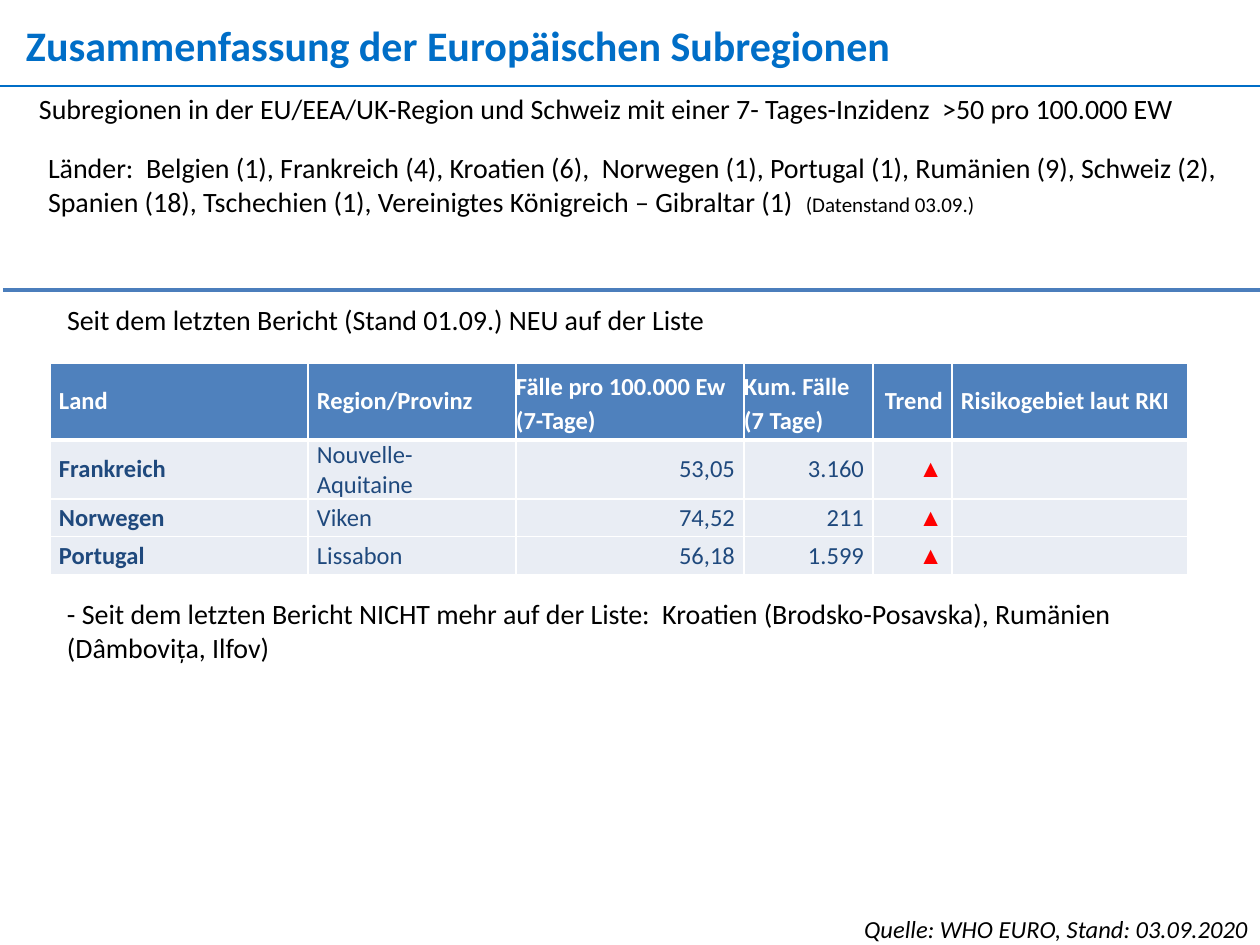
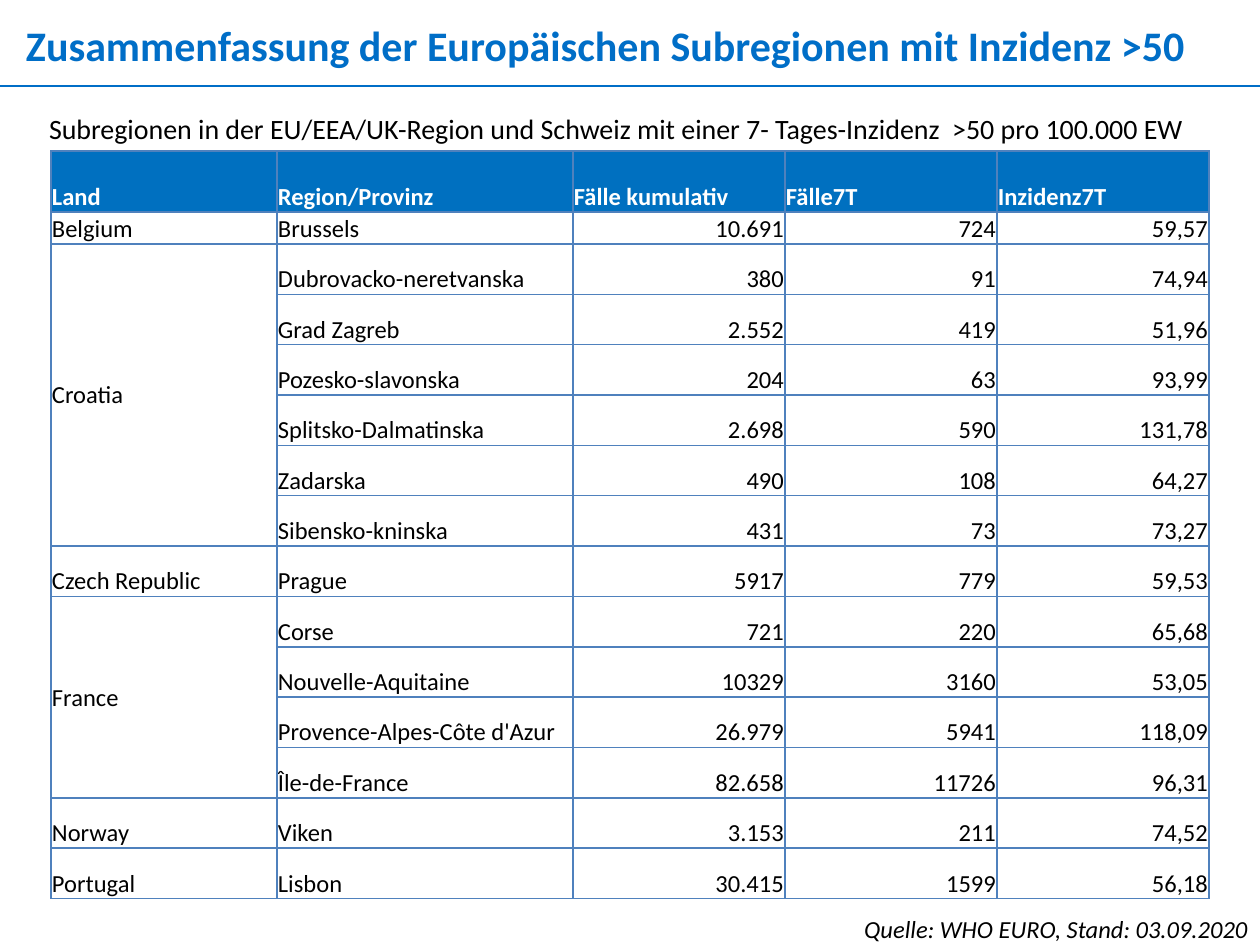
from dataclasses import dataclass
from itertools import accumulate

from lxml.etree import SubElement
from pptx import Presentation
from pptx.dml.color import RGBColor
from pptx.enum.shapes import MSO_CONNECTOR
from pptx.enum.text import MSO_ANCHOR, PP_ALIGN
from pptx.oxml.ns import qn
from pptx.util import Emu, Pt


@dataclass(frozen=True)
class Theme:
    """Fonts, colours and type sizes of the report."""
    font: str = "Calibri"
    symbol_font: str = "Arial"
    title_blue: str = "006EC7"
    divider: str = "4B7EBC"
    accent: str = "4F81BD"
    header_blue: str = "0070C0"
    row_tint: str = "E9EDF4"
    navy: str = "1F497D"
    rising: str = "FF0000"
    black: str = "000000"
    white: str = "FFFFFF"
    title_size: int = 24
    body_size: int = 16
    table_size: int = 14
    note_size: int = 12


THEME = Theme()
PX_PER_INCH = 126
SLIDE_BOX = (0, 0, 1260, 945)
INSET = (13, 6, 13, 6)
NO_INSET = (0, 0, 0, 0)
SUBTITLE = ("Subregionen in der EU/EEA/UK-Region und Schweiz mit einer "
            "7- Tages-Inzidenz  >50 pro 100.000 EW")
NEW_HEADERS = ["Land", "Region/Provinz", "Fälle pro 100.000 Ew\n(7-Tage)",
               "Kum. Fälle\n(7 Tage)", "Trend", "Risikogebiet laut RKI"]
NEW_REGIONS = [
    ("Frankreich", "Nouvelle-Aquitaine", "53,05", "3.160", "▲", ""),
    ("Norwegen", "Viken", "74,52", "211", "▲", ""),
    ("Portugal", "Lissabon", "56,18", "1.599", "▲", ""),
]
INCIDENCE_HEADERS = ["Land", "Region/Provinz", "Fälle kumulativ", "Fälle7T", "Inzidenz7T"]
INCIDENCE = {
    "Belgium": [("Brussels", "10.691", "724", "59,57")],
    "Croatia": [
        ("Dubrovacko-neretvanska", "380", "91", "74,94"),
        ("Grad Zagreb", "2.552", "419", "51,96"),
        ("Pozesko-slavonska", "204", "63", "93,99"),
        ("Splitsko-Dalmatinska", "2.698", "590", "131,78"),
        ("Zadarska", "490", "108", "64,27"),
        ("Sibensko-kninska", "431", "73", "73,27"),
    ],
    "Czech Republic": [("Prague", "5917", "779", "59,53")],
    "France": [
        ("Corse", "721", "220", "65,68"),
        ("Nouvelle-Aquitaine", "10329", "3160", "53,05"),
        ("Provence-Alpes-Côte d'Azur", "26.979", "5941", "118,09"),
        ("Île-de-France", "82.658", "11726", "96,31"),
    ],
    "Norway": [("Viken", "3.153", "211", "74,52")],
    "Portugal": [("Lisbon", "30.415", "1599", "56,18")],
}


def px(length):
    """Turn px into EMU."""
    return Emu(round(length * 914400 / PX_PER_INCH))


def within(box, left, top, width, height):
    """Return a box given relative to the corner of another."""
    return box[0] + left, box[1] + top, width, height


def apply_format(target, values):
    """Set each attribute named in a dict."""
    for name, value in values.items():
        setattr(target, name, value)


def set_insets(target, insets):
    """Set left, top, right and bottom margins in px."""
    for side, inset in zip(("left", "top", "right", "bottom"), insets):
        setattr(target, f"margin_{side}", px(inset))


def add_run(paragraph, text, size, color=THEME.black, **font_values):
    """Add one formatted run to a paragraph."""
    run = paragraph.add_run()
    run.text = text
    apply_format(run.font, {"name": THEME.font, "size": Pt(size), **font_values})
    run.font.color.rgb = RGBColor.from_string(color)


def add_text(slide, box, text, size=THEME.body_size, insets=INSET,
             align=PP_ALIGN.LEFT, **run_values):
    """Add a wrapped text box and return its paragraph."""
    frame = slide.shapes.add_textbox(*map(px, box)).text_frame
    frame.word_wrap = True
    set_insets(frame, insets)
    paragraph = frame.paragraphs[0]
    paragraph.alignment = align
    add_run(paragraph, text, size, **run_values)
    return paragraph


def add_rule(slide, left, top, width, color, weight):
    """Draw a horizontal line without shadow."""
    ends = map(px, (left, top, left + width, top))
    rule = slide.shapes.add_connector(MSO_CONNECTOR.STRAIGHT, *ends)
    rule.line.color.rgb = RGBColor.from_string(color)
    rule.line.width = Pt(weight)
    SubElement(rule._element.spPr, qn("a:effectLst"))


def add_grid(slide, box, widths, heights):
    """Add an unstyled table with the given columns and rows."""
    grid = slide.shapes.add_table(len(heights), len(widths), *map(px, box)).table
    apply_format(grid, {"first_row": False, "horz_banding": False})
    for column, width in zip(grid.columns, widths):
        column.width = px(width)
    for row, height in zip(grid.rows, heights):
        row.height = px(height)
    return grid


def set_borders(cell, color, bottom=1):
    """Give a cell its four borders, the bottom one with its own weight."""
    properties = cell._tc.get_or_add_tcPr()
    for side, weight in (("L", 1), ("R", 1), ("T", 1), ("B", bottom)):
        border = SubElement(properties, qn(f"a:ln{side}"), w=str(Pt(weight)))
        paint = SubElement(border, qn("a:solidFill"))
        SubElement(paint, qn("a:srgbClr"), val=color)


def fill_cell(cell, text, border, fill=None, bottom=1, insets=NO_INSET,
              anchor=MSO_ANCHOR.MIDDLE, paragraph_values=None, **run_values):
    """Write a cell, one paragraph per line, and paint it."""
    set_borders(cell, border, bottom)
    if fill:
        cell.fill.solid()
        cell.fill.fore_color.rgb = RGBColor.from_string(fill)
    else:
        cell.fill.background()
    set_insets(cell, insets)
    cell.vertical_anchor = anchor
    for index, line in enumerate(text.split("\n")):
        frame = cell.text_frame
        paragraph = frame.add_paragraph() if index else frame.paragraphs[0]
        apply_format(paragraph, paragraph_values or {})
        add_run(paragraph, line, THEME.table_size, **run_values)


def add_frame(slide, box, title):
    """Place the title, its rule and the source line."""
    add_text(slide, within(box, 26, 20, 1213, 50), title, THEME.title_size,
             NO_INSET, color=THEME.title_blue, bold=True)
    add_rule(slide, box[0], box[1] + 86, box[2], THEME.title_blue, 1.5)
    add_text(slide, within(box, 679, 908, 582, 43), "Quelle: WHO EURO, Stand: 03.09.2020",
             THEME.table_size, align=PP_ALIGN.RIGHT, italic=True)


def add_new_regions(slide, box):
    """Fill a box with the table of newly listed regions."""
    grid = add_grid(slide, box, (258, 208, 228, 129, 79, 236), (77, 58, 34, 34))
    spaced = {"space_before": Pt(2), "space_after": Pt(2)}
    for col, label in enumerate(NEW_HEADERS):
        stacked = "\n" in label
        align = PP_ALIGN.RIGHT if label == "Trend" else PP_ALIGN.LEFT
        layout = {"line_spacing": 1.15} if stacked else spaced
        fill_cell(grid.cell(0, col), label, THEME.white, THEME.accent, bottom=3,
                  insets=NO_INSET if stacked else (9, 0, 9, 0),
                  paragraph_values={"alignment": align, **layout},
                  color=THEME.white, bold=True)
    for row, region in enumerate(NEW_REGIONS, 1):
        for col, value in enumerate(region):
            trend = value == "▲"
            align = PP_ALIGN.RIGHT if col in (2, 3, 4) else PP_ALIGN.LEFT
            fill_cell(grid.cell(row, col), value, THEME.white, THEME.row_tint,
                      insets=(9, 0, 9, 0),
                      paragraph_values={"alignment": align, **spaced},
                      color=THEME.rising if trend else THEME.navy,
                      name=THEME.symbol_font if trend else THEME.font, bold=col == 0)


def add_incidence(slide, box):
    """Fill a box with the incidence table, one merged cell per country."""
    rows = [(country, *region) for country, regions in INCIDENCE.items()
            for region in regions]
    header, first = 61, 32
    row_height = (box[3] - header - first) / (len(rows) - 1)
    heights = [header, first] + [row_height] * (len(rows) - 1)
    grid = add_grid(slide, box, (226, 296, 212, 212, 212), heights)
    counts = [len(regions) for regions in INCIDENCE.values()]
    starts = list(accumulate(counts, initial=1))
    merged = {start for start, count in zip(starts, counts) if count > 1}
    for row, values in enumerate([INCIDENCE_HEADERS, *rows]):
        heading = row == 0
        for col, value in enumerate(values):
            hidden = col == 0 and row not in (0, *starts)
            centred = col == 0 and row in merged
            align = PP_ALIGN.RIGHT if col > 1 and not heading else PP_ALIGN.LEFT
            fill_cell(grid.cell(row, col), "" if hidden else value, THEME.accent,
                      THEME.header_blue if heading else None, insets=(1, 1, 1, 0),
                      anchor=MSO_ANCHOR.MIDDLE if centred else MSO_ANCHOR.BOTTOM,
                      paragraph_values={"alignment": align},
                      color=THEME.white if heading else THEME.black, bold=heading)
    for start, count in zip(starts, counts):
        if count > 1:
            grid.cell(start, 0).merge(grid.cell(start + count - 1, 0))


def build_summary(slide, box):
    """Build the slide with affected countries and list changes."""
    add_frame(slide, box, "Zusammenfassung der Europäischen Subregionen")
    add_text(slide, within(box, 26, 86, 1188, 47), SUBTITLE)
    add_text(slide, within(box, 54, 297, 1002, 47),
             "Seit dem letzten Bericht (Stand 01.09.) NEU auf der Liste")
    countries = add_text(
        slide, within(box, 35, 145, 1205, 81),
        "Länder:  Belgien (1), Frankreich (4), Kroatien (6),  Norwegen (1), Portugal (1), "
        "Rumänien (9), Schweiz (2), Spanien (18), Tschechien (1), "
        "Vereinigtes Königreich – Gibraltar (1)  ")
    add_run(countries, "(Datenstand 03.09.)", THEME.note_size)
    add_rule(slide, box[0] + 3, box[1] + 290, box[2], THEME.divider, 1.75)
    add_new_regions(slide, within(box, 50, 363, 1138, 203))
    add_text(slide, within(box, 54, 591, 1121, 81),
             "- Seit dem letzten Bericht NICHT mehr auf der Liste:  "
             "Kroatien (Brodsko-Posavska), Rumänien (Dâmbovița, Ilfov)")


def build_incidence(slide, box):
    """Build the slide with all regions above the threshold."""
    add_frame(slide, box, "Zusammenfassung der Europäischen Subregionen mit Inzidenz >50")
    add_incidence(slide, within(box, 51, 151, 1158, 748))
    add_text(slide, within(box, 36, 106, 1188, 47), SUBTITLE)


def main():
    """Build both slides and save the presentation."""
    deck = Presentation()
    deck.slide_width, deck.slide_height = map(px, SLIDE_BOX[2:])
    for build in (build_summary, build_incidence):
        build(deck.slides.add_slide(deck.slide_layouts[6]), SLIDE_BOX)
    deck.save("out.pptx")


if __name__ == "__main__":
    main()
